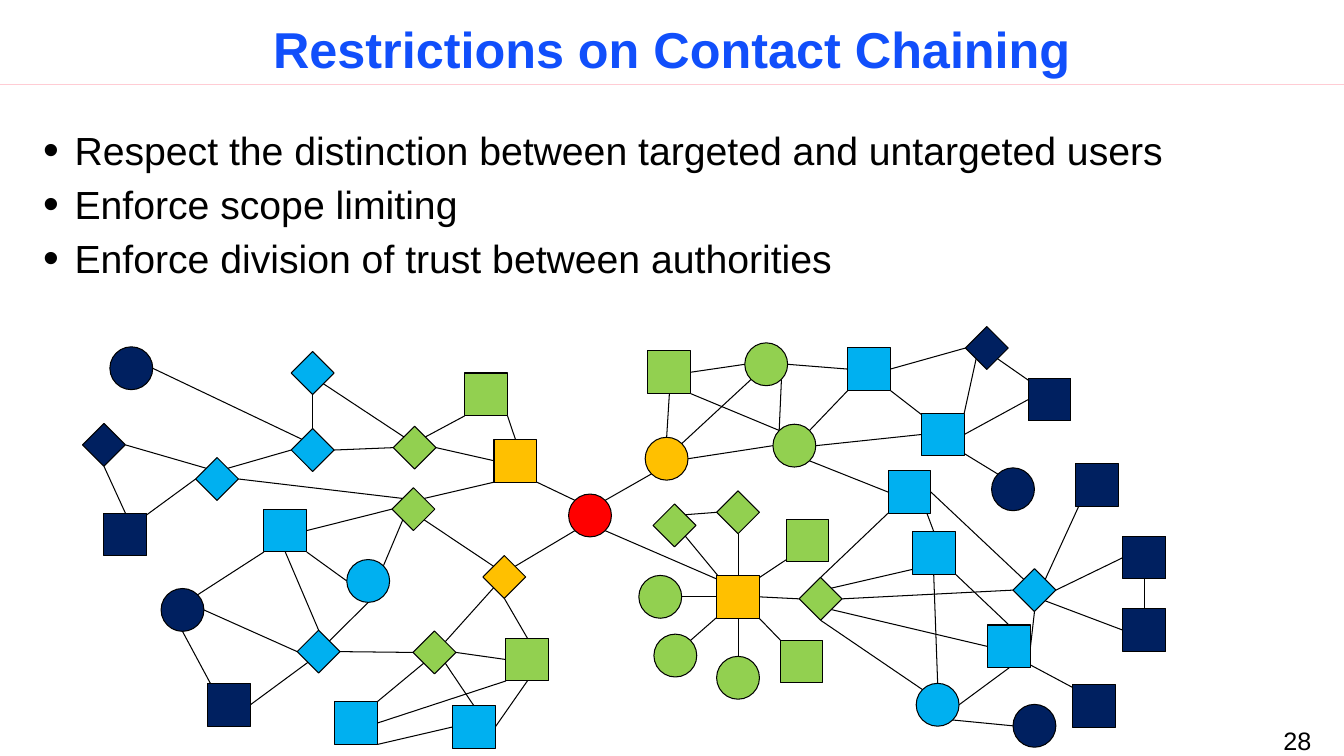
from dataclasses import dataclass

from lxml import etree
from pptx import Presentation
from pptx.dml.color import RGBColor
from pptx.enum import shapes, text
from pptx.oxml import ns
from pptx.util import Cm, Pt

BLACK = RGBColor(0x00, 0x00, 0x00)
TITLE_BLUE = RGBColor(0x11, 0x4F, 0xFB)
PINK = RGBColor(0xFF, 0xCC, 0xD4)
RED = RGBColor(0xFF, 0x00, 0x00)
GOLD = RGBColor(0xFF, 0xC0, 0x00)
GREEN = RGBColor(0x92, 0xD0, 0x50)
BLUE = RGBColor(0x00, 0xB0, 0xF0)
NAVY = RGBColor(0x00, 0x20, 0x60)

SQUARE = shapes.MSO_SHAPE.RECTANGLE
CIRCLE = shapes.MSO_SHAPE.OVAL
DIAMOND = shapes.MSO_SHAPE.DIAMOND

NODE_SIZE = 1.08
DIAGONAL_REACH = {SQUARE: 0.71, CIRCLE: 0.71, DIAMOND: 0.5}
CORNER_REACH = 1


@dataclass(frozen=True)
class Node:
    kind: shapes.MSO_SHAPE
    color: RGBColor
    left: float
    top: float

    def port(self, side: str) -> tuple[float, float]:
        compass = side.lower()
        dx = ("e" in compass) - ("w" in compass)
        dy = ("s" in compass) - ("n" in compass)
        reach = 1.0
        if dx and dy:
            reach = CORNER_REACH if side.isupper() else DIAGONAL_REACH[self.kind]
        radius = NODE_SIZE / 2
        return (self.left + radius * (1 + dx * reach),
                self.top + radius * (1 + dy * reach))


@dataclass(frozen=True)
class TextBlock:
    lines: tuple[str, ...]
    box: tuple[float, float, float, float]
    size: int
    color: RGBColor = BLACK
    bold: bool = False
    align: text.PP_ALIGN = text.PP_ALIGN.LEFT
    anchor: text.MSO_ANCHOR = text.MSO_ANCHOR.TOP
    spacing: float = 1.0
    bullets: bool = False


TEXTS = (
    TextBlock(("28",), (30.76, 18.16, 2.54, 1.02), 18, align=text.PP_ALIGN.RIGHT),
    TextBlock(("Restrictions on Contact Chaining",), (0, 0.43, 33.87, 1.7), 36,
              TITLE_BLUE, True, text.PP_ALIGN.CENTER, text.MSO_ANCHOR.BOTTOM, 0.9),
    TextBlock(("Respect the distinction between targeted and untargeted users",
               "Enforce scope limiting",
               "Enforce division of trust between authorities"),
              (0.84, 3.18, 32.46, 4.37), 28, spacing=0.9, bullets=True),
)

NODES = {
    "hub": Node(CIRCLE, RED, 14.33, 12.45),
    "o1": Node(SQUARE, GOLD, 12.45, 11.07),
    "o2": Node(DIAMOND, GOLD, 12.17, 14.0),
    "o3": Node(CIRCLE, GOLD, 16.26, 11.02),
    "o4": Node(SQUARE, GOLD, 18.06, 14.5),
    "g1": Node(SQUARE, GREEN, 11.71, 9.4),
    "g2": Node(DIAMOND, GREEN, 9.91, 10.74),
    "g3": Node(DIAMOND, GREEN, 9.88, 12.29),
    "g4": Node(DIAMOND, GREEN, 10.41, 15.9),
    "g5": Node(SQUARE, GREEN, 12.75, 16.08),
    "g6": Node(SQUARE, GREEN, 16.33, 8.84),
    "g7": Node(CIRCLE, GREEN, 18.77, 8.64),
    "g8": Node(CIRCLE, GREEN, 19.48, 10.69),
    "g9": Node(DIAMOND, GREEN, 16.46, 12.7),
    "g10": Node(DIAMOND, GREEN, 18.06, 12.37),
    "g11": Node(SQUARE, GREEN, 19.81, 13.08),
    "g12": Node(CIRCLE, GREEN, 16.1, 14.5),
    "g13": Node(CIRCLE, GREEN, 16.48, 15.98),
    "g14": Node(CIRCLE, GREEN, 18.06, 16.54),
    "g15": Node(SQUARE, GREEN, 19.66, 16.13),
    "g16": Node(DIAMOND, GREEN, 20.14, 14.55),
    "b1": Node(DIAMOND, BLUE, 7.34, 8.86),
    "b2": Node(DIAMOND, BLUE, 7.34, 10.8),
    "b3": Node(DIAMOND, BLUE, 4.93, 11.53),
    "b4": Node(SQUARE, BLUE, 6.65, 12.83),
    "b5": Node(CIRCLE, BLUE, 8.74, 14.1),
    "b6": Node(DIAMOND, BLUE, 7.49, 15.88),
    "b7": Node(SQUARE, BLUE, 8.43, 17.68),
    "b8": Node(SQUARE, BLUE, 11.4, 17.78),
    "b9": Node(SQUARE, BLUE, 21.36, 8.76),
    "b10": Node(SQUARE, BLUE, 23.22, 10.41),
    "b11": Node(SQUARE, BLUE, 22.38, 11.86),
    "b12": Node(SQUARE, BLUE, 22.99, 13.39),
    "b13": Node(DIAMOND, BLUE, 25.53, 14.33),
    "b14": Node(SQUARE, BLUE, 24.89, 15.75),
    "b15": Node(CIRCLE, BLUE, 23.09, 17.22),
    "n1": Node(CIRCLE, NAVY, 2.77, 8.74),
    "n2": Node(DIAMOND, NAVY, 2.08, 10.67),
    "n3": Node(SQUARE, NAVY, 2.62, 12.93),
    "n4": Node(CIRCLE, NAVY, 4.06, 14.83),
    "n5": Node(SQUARE, NAVY, 5.23, 17.22),
    "n6": Node(DIAMOND, NAVY, 24.33, 8.23),
    "n7": Node(SQUARE, NAVY, 25.91, 9.53),
    "n8": Node(CIRCLE, NAVY, 24.99, 11.79),
    "n9": Node(SQUARE, NAVY, 27.1, 11.68),
    "n10": Node(SQUARE, NAVY, 28.3, 13.51),
    "n11": Node(SQUARE, NAVY, 28.3, 15.34),
    "n12": Node(SQUARE, NAVY, 27.03, 17.25),
    "n13": Node(CIRCLE, NAVY, 25.53, 17.75),
}

GOLD_LINKS = """
hub.nw-o1.SE hub.sw-o2.ne hub.ne-o3.sw hub.se-o4.nw
o1.n-g1.SE o1.w-g2.e o1.SW-g3.ne o2.nw-g3.se o2.sw-g4.ne o2.s-g5.n
o3.n-g6.s o3.ne-g7.sw o3.e-g8.w o4.nw-g9.se o4.n-g10.s o4.ne-g11.sw
o4.w-g12.e o4.sw-g13.ne o4.s-g14.n o4.se-g15.nw o4.e-g16.w
"""
GREEN_LINKS = """
g1.SW-g2.ne g4.e-g5.w g6.e-g7.w g6.SE-g8.nw g7.se-g8.nw g9.ne-g10.w
g2.nw-b1.se g2.w-b2.e g3.nw-b3.e g3.w-b4.e g3.sw-b5.ne g4.w-b6.e
g4.sw-b7.NE g4.se-b8.n g5.SW-b7.e g5.s-b8.e g7.e-b9.w g8.ne-b9.sw
g8.e-b10.w g8.se-b11.w g16.n-b11.sw g16.ne-b12.sw g16.e-b13.w
g16.se-b14.w g16.s-b15.nw
"""
BLUE_LINKS = """
b1.s-b2.n b2.w-b3.ne b4.SE-b5.w b4.s-b6.n b5.s-b6.ne b7.SE-b8.w
b9.SE-b10.nw b11.se-b12.n b11.e-b13.nw b12.se-b14.n b12.s-b15.n
b13.s-b14.e b14.s-b15.e
b2.nw-n1.e b3.nw-n2.e b3.w-n3.ne b4.SW-n4.ne b6.w-n4.e b6.sw-n5.e
b9.e-n6.w b10.NE-n6.sw b10.e-n7.w b10.se-n8.nw b13.ne-n9.sw b13.e-n10.w
b13.se-n11.w b14.se-n12.nw b15.se-n13.w
n2.s-n3.n n4.s-n5.nw n6.se-n7.nw n10.s-n11.n
"""


def add_line(s, start: tuple[float, float], end: tuple[float, float],
             color: RGBColor = BLACK, width: float = 0.75) -> None:
    points = [Cm(v) for v in (*start, *end)]
    line = s.shapes.add_connector(shapes.MSO_CONNECTOR.STRAIGHT, *points)
    line.line.color.rgb = color
    line.line.width = Pt(width)
    etree.SubElement(line._element.spPr, ns.qn("a:effectLst"))


def add_links(s, links: str) -> None:
    for link in links.split():
        ends = [end.split(".") for end in link.split("-")]
        start, end = (NODES[name].port(side) for name, side in ends)
        add_line(s, start, end)


def add_node(s, node: Node) -> None:
    sp = s.shapes.add_shape(node.kind, Cm(node.left), Cm(node.top),
                            Cm(NODE_SIZE), Cm(NODE_SIZE))
    sp.shadow.inherit = False
    sp.fill.solid()
    sp.fill.fore_color.rgb = node.color
    sp.line.color.rgb = BLACK
    sp.line.width = Pt(0.75)


def add_bullet(p) -> None:
    pPr = p._p.get_or_add_pPr()
    pPr.set("marL", str(Cm(0.79)))
    pPr.set("indent", str(-Cm(0.79)))
    before = etree.SubElement(pPr, ns.qn("a:spcBef"))
    etree.SubElement(before, ns.qn("a:spcPct"), val="30000")
    color = etree.SubElement(pPr, ns.qn("a:buClr"))
    etree.SubElement(color, ns.qn("a:srgbClr"), val=str(BLACK))
    etree.SubElement(pPr, ns.qn("a:buSzPct"), val="115000")
    etree.SubElement(pPr, ns.qn("a:buFont"), typeface="Arial")
    etree.SubElement(pPr, ns.qn("a:buChar"), char="•")


def add_text(s, block: TextBlock) -> None:
    tf = s.shapes.add_textbox(*(Cm(v) for v in block.box)).text_frame
    tf.word_wrap = True
    tf.vertical_anchor = block.anchor
    tf.text = "\n".join(block.lines)
    for p in tf.paragraphs:
        p.alignment = block.align
        p.line_spacing = block.spacing
        if block.bullets:
            add_bullet(p)
        for r in p.runs:
            r.font.name = "Arial"
            r.font.size = Pt(block.size)
            r.font.bold = block.bold
            r.font.color.rgb = block.color


def main() -> None:
    prs = Presentation()
    prs.slide_width, prs.slide_height = Cm(33.87), Cm(19.05)
    s = prs.slides.add_slide(prs.slide_layouts[6])
    add_line(s, (0, 2.12), (33.87, 2.12), PINK, 0.25)
    for links in (GOLD_LINKS, GREEN_LINKS, BLUE_LINKS):
        add_links(s, links)
    for node in NODES.values():
        add_node(s, node)
    for block in TEXTS:
        add_text(s, block)
    prs.save("out.pptx")


if __name__ == "__main__":
    main()
